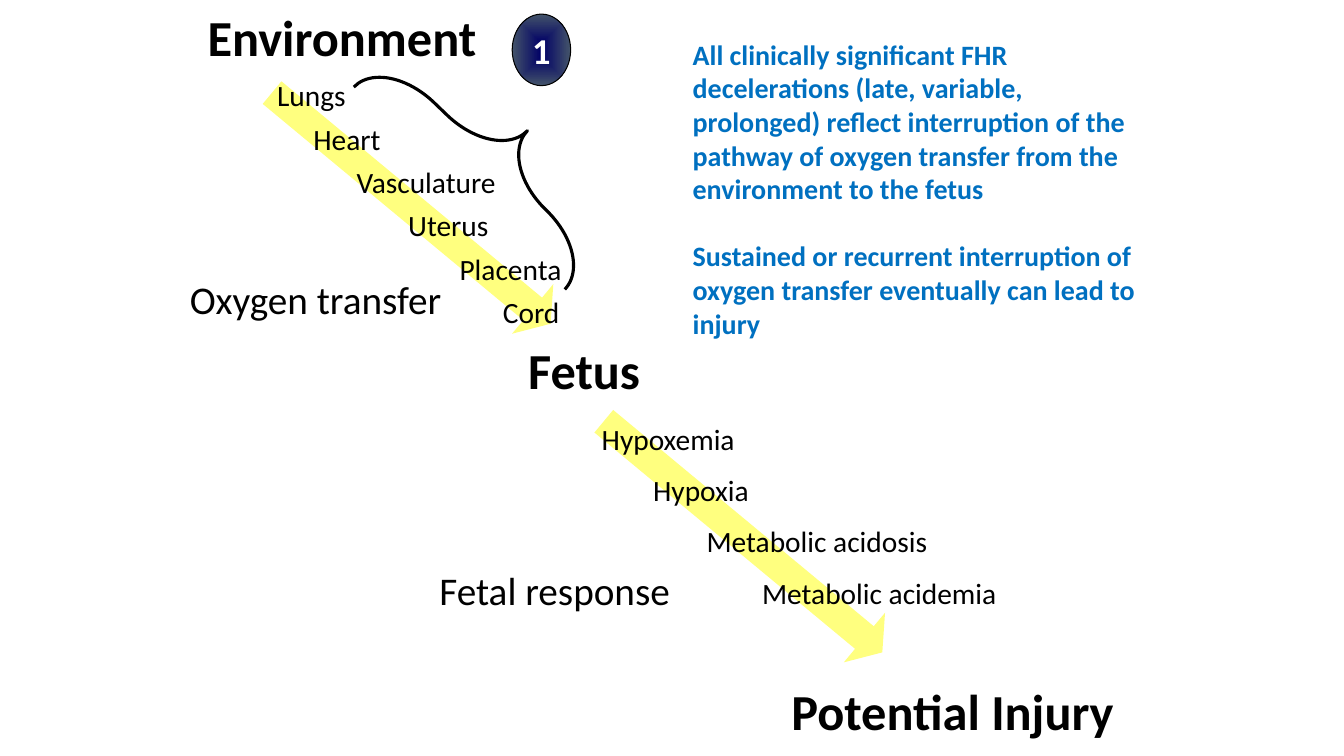
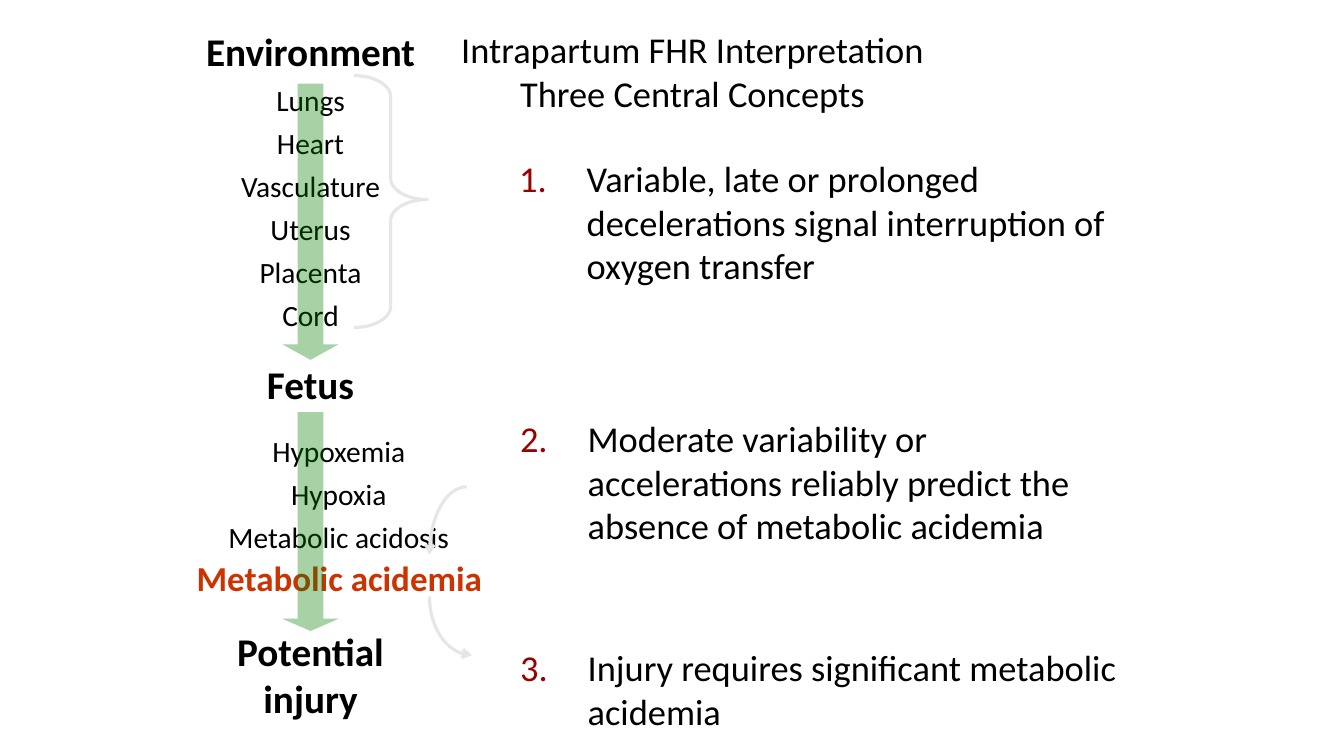
"""Build two slides on the pathway from oxygen transfer to fetal injury."""
import math

from lxml import etree
from pptx import Presentation
from pptx import util as u
from pptx.dml.color import RGBColor
from pptx.enum import shapes, text
from pptx.oxml.ns import qn

FONT = "Calibri"
BLACK, WHITE, BLUE, RED, ORANGE = "000000", "FFFFFF", "0070C0", "990000", "CC3300"
YELLOW, GREEN, GREY, NAVY, SLATE = "FFFF00", "008000", "E7E6E6", "000066", "44546A"
LABEL_H, AXIS_X = 0.45, 3.08
ROOMY = (0.12, 0.06)

ORGANS = [("Lungs", 1.02, 2.65), ("Heart", 0.91, 3.01), ("Vasculature", 1.74, 3.44),
          ("Uterus", 1.06, 3.95), ("Placenta", 1.33, 4.46), ("Cord", 0.83, 4.89)]
RESPONSES = [("Hypoxemia", 1.66, 5.87), ("Hypoxia", 1.25, 6.38),
             ("Metabolic acidosis", 2.58, 6.91), ("Metabolic acidemia", 2.69, 7.46)]
RESPONSE_CENTRES = [3.36, 3.36, 3.36]

DIAGONAL_HEADINGS = [("Environment", (1.96, 0.01, 3.29, 0.71)),
                     ("Fetus", (5.14, 3.32, 1.53, 0.7)),
                     ("Potential Injury", (7.75, 6.7, 4.25, 0.7))]
VERTICAL_HEADINGS = [("Environment", (1.79, 0.22, 2.58, 0.57)),
                     ("Fetus", (2.46, 3.53, 1.24, 0.57)),
                     ("Potential injury", (1.85, 6.17, 2.46, 1.03))]
SUMMARY = ["All clinically significant FHR decelerations (late, variable, prolonged) reflect "
           "interruption of the pathway of oxygen transfer from the environment to the fetus",
           "Sustained or recurrent interruption of oxygen transfer eventually can lead to injury"]
TITLE = ["Intrapartum FHR Interpretation", "Three Central Concepts"]
CONCEPTS = [("Variable, late or prolonged decelerations signal interruption of oxygen transfer",
             (5.05, 1.5, 6.29, 1.4)),
            ("Moderate variability or accelerations reliably predict the absence of "
             "metabolic acidemia", (5.06, 4.08, 5.94, 1.4)),
            ("Injury requires significant metabolic acidemia", (5.06, 6.35, 6.28, 0.97))]


def rgb(color):
    return RGBColor.from_string(color)


def inches(values):
    return [u.Inches(v) for v in values]


def write(sp, content, size=21, color=BLACK, bold=False, align="LEFT", gap=0,
          inset=(0.1, 0.05), anchor="TOP", wrap=True):
    tf = sp.text_frame
    tf.word_wrap = wrap
    tf.auto_size = text.MSO_AUTO_SIZE.NONE
    tf.vertical_anchor = getattr(text.MSO_ANCHOR, anchor)
    tf.margin_left = tf.margin_right = u.Inches(inset[0])
    tf.margin_top = tf.margin_bottom = u.Inches(inset[1])
    for i, line in enumerate([content] if isinstance(content, str) else content):
        p = tf.add_paragraph() if i else tf.paragraphs[0]
        p.alignment = getattr(text.PP_ALIGN, align)
        p.space_before = u.Pt(gap if i else 0)
        r = p.add_run()
        r.text = line
        f = r.font
        f.name, f.size, f.bold, f.color.rgb = FONT, u.Pt(size), bold, rgb(color)
    return tf


def add_text(s, content, box, **fmt):
    return write(s.shapes.add_textbox(*inches(box)), content, **fmt)


def outline(sp, color, width):
    sp.shadow.inherit = False
    sp.line.color.rgb = rgb(color)
    sp.line.width = u.Pt(width)


def add_arrow(s, box, color, opacity, head, rotation=0):
    sp = s.shapes.add_shape(shapes.MSO_SHAPE.DOWN_ARROW, *inches(box))
    sp.adjustments[0], sp.adjustments[1] = 0.455, head
    sp.rotation = rotation
    sp.shadow.inherit = False
    sp.line.fill.background()
    sp.fill.solid()
    sp.fill.fore_color.rgb = rgb(color)
    clr = next(sp.fill._xPr.iter(qn("a:srgbClr")))
    etree.SubElement(clr, qn("a:alpha"), val=str(opacity * 1000))


def add_brace(s, box, color, adjustments, rotation=0):
    sp = s.shapes.add_shape(shapes.MSO_SHAPE.RIGHT_BRACE, *inches(box))
    sp.adjustments[0], sp.adjustments[1] = adjustments
    sp.rotation = rotation
    sp.fill.background()
    outline(sp, color, 2.25)


def add_badge(s, label, box):
    sp = s.shapes.add_shape(shapes.MSO_SHAPE.OVAL, *inches(box))
    outline(sp, BLACK, 0.75)
    sp.fill.gradient()
    for stop, color in zip(sp.fill.gradient_stops, (NAVY, SLATE)):
        stop.color.rgb = rgb(color)
    grad = sp._element.spPr.find(qn("a:gradFill"))
    grad.remove(grad.find(qn("a:lin")))
    shade = etree.SubElement(grad, qn("a:path"), path="shape")
    etree.SubElement(shade, qn("a:fillToRect"), **dict.fromkeys("ltrb", "50000"))
    write(sp, label, size=26, color=WHITE, bold=True, align="CENTER", anchor="MIDDLE", wrap=False)


def add_curve(s, centre, radii, start, end, steps=24):
    angles = [math.radians(start + (end - start) * i / steps) for i in range(steps + 1)]
    points = [inches(c + r * f(a) for c, r, f in zip(centre, radii, (math.cos, math.sin)))
              for a in angles]
    builder = s.shapes.build_freeform(*points[0])
    builder.add_line_segments(points[1:], close=False)
    sp = builder.convert_to_shape()
    sp.fill.background()
    outline(sp, GREY, 2.25)
    etree.SubElement(sp.line._get_or_add_ln(), qn("a:tailEnd"), type="arrow")


def number(p, start):
    pPr = p._p.get_or_add_pPr()
    indent = u.Inches(0.67)
    pPr.set("marL", str(indent))
    pPr.set("indent", str(-indent))
    etree.SubElement(etree.SubElement(pPr, qn("a:buClr")), qn("a:srgbClr"), val=RED)
    etree.SubElement(pPr, qn("a:buFont"), typeface=FONT)
    etree.SubElement(pPr, qn("a:buAutoNum"), type="arabicPeriod", startAt=str(start))


def build_diagonal(prs):
    s = prs.slides.add_slide(prs.slide_layouts[6])
    for left, top in ((3.76, 0.27), (7.05, 3.53)):
        add_arrow(s, (left, top, 0.64, 3.59), YELLOW, 50, 0.36, rotation=309.7)
    for labels, top, step in ((ORGANS, 0.72, 0.43), (RESPONSES, 4.13, 0.507)):
        for i, (label, width, left) in enumerate(labels):
            add_text(s, label, (left, top + i * step, width, LABEL_H))
    for heading, box in DIAGONAL_HEADINGS:
        add_text(s, heading, box, size=36, bold=True)
    add_text(s, "Oxygen transfer", (1.67, 2.67, 2.92, 0.59), size=28, align="CENTER", inset=ROOMY)
    add_text(s, "Fetal response", (4.26, 5.57, 2.78, 0.57), size=28)
    add_text(s, SUMMARY, (6.75, 0.31, 4.84, 4.16), size=20, color=BLUE, bold=True, gap=24,
             inset=ROOMY)
    add_badge(s, "1", (5.08, 0.14, 0.58, 0.71))
    add_brace(s, (4.42, 0.1, 0.88, 2.9), BLACK, (0.771, 0.532), rotation=313.8)


def build_vertical(prs):
    s = prs.slides.add_slide(prs.slide_layouts[5])
    title = s.shapes.title
    title.left, title.top, title.width, title.height = inches((3.99, 0.22, 5.76, 0.97))
    write(title, TITLE, size=26, align="CENTER")
    for i, (label, width, _) in enumerate(ORGANS):
        add_text(s, label, (AXIS_X - width / 2, 0.77 + i * 0.426, width, LABEL_H), align="CENTER")
    for i, (centre, (label, width, _)) in enumerate(zip(RESPONSE_CENTRES, RESPONSES)):
        add_text(s, label, (centre - width / 2, 4.25 + i * 0.426, width, LABEL_H), align="CENTER")
    add_text(s, RESPONSES[-1][0], (1.67, 5.47, 3.39, 0.52), size=25, color=ORANGE, bold=True,
             align="CENTER")
    for top, height, head in ((0.83, 2.74, 0.275), (4.09, 2.17, 0.217)):
        add_arrow(s, (2.8, top, 0.56, height), GREEN, 35, head)
    for heading, box in VERTICAL_HEADINGS:
        add_text(s, heading, box, size=28, bold=True, align="CENTER")
    add_brace(s, (3.51, 0.75, 0.73, 2.5), GREY, (0.287, 0.492))
    for i, (concept, box) in enumerate(CONCEPTS, 1):
        number(add_text(s, concept, box, size=26).paragraphs[0], i)
    add_curve(s, (4.63, 5.5), (0.37, 0.67), 270, 180)
    add_curve(s, (4.68, 5.92), (0.42, 0.58), 180, 90)


def main():
    prs = Presentation()
    prs.slide_width, prs.slide_height = inches((13.33, 7.5))
    build_diagonal(prs)
    build_vertical(prs)
    prs.save("out.pptx")


if __name__ == "__main__":
    main()
